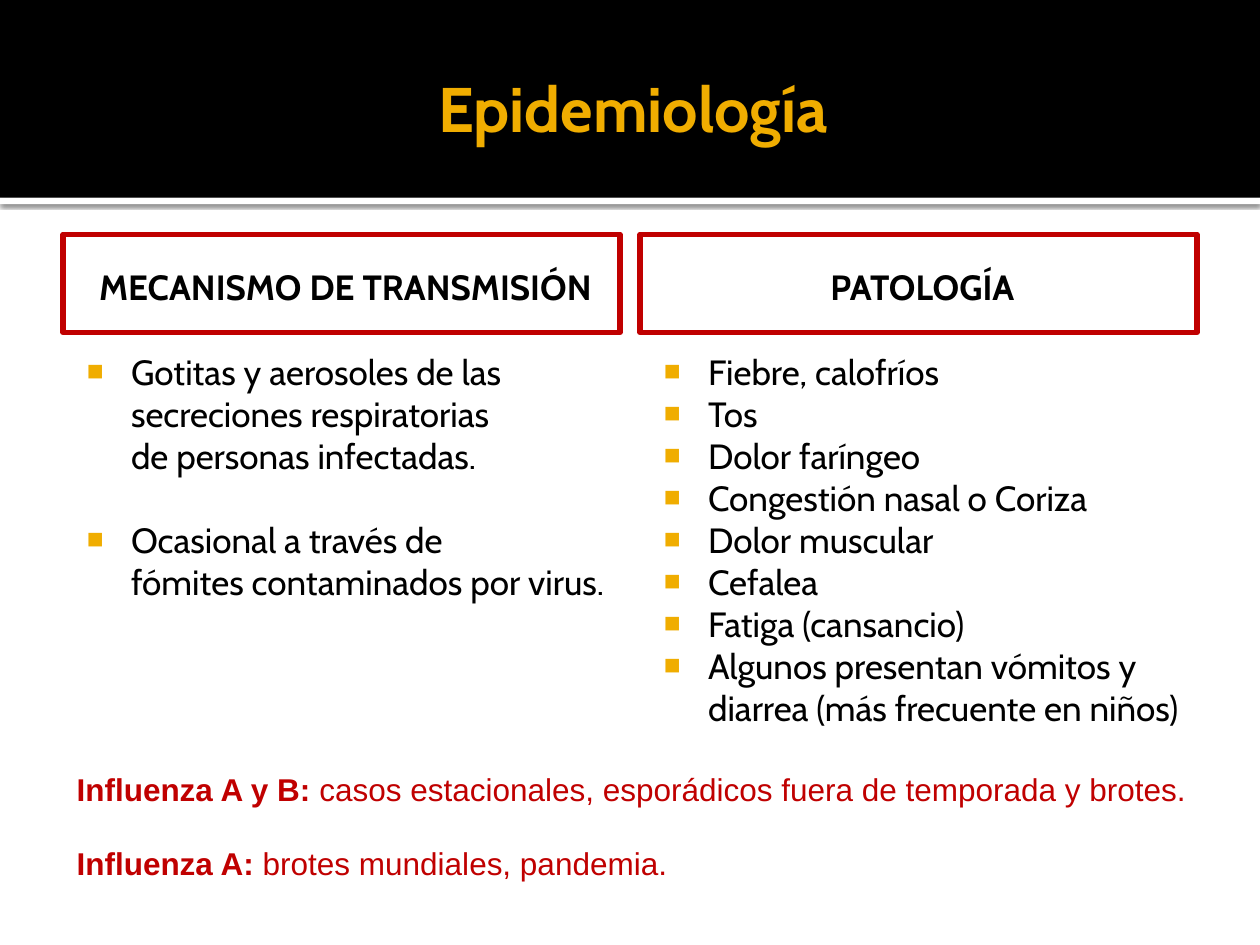
from lxml.etree import SubElement
from pptx import Presentation
from pptx.dml.color import RGBColor
from pptx.enum.shapes import MSO_SHAPE
from pptx.enum.text import MSO_ANCHOR, PP_ALIGN
from pptx.oxml import parse_xml
from pptx.oxml.ns import nsdecls, qn
from pptx.util import Inches, Pt

COLORS = {"black": "000000", "white": "FFFFFF", "gold": "F0AD00", "red": "C00000"}


def add_text(left, top, width, height, insets, anchor=MSO_ANCHOR.TOP):
    box = slide.shapes.add_textbox(Inches(left), Inches(top), Inches(width), Inches(height))
    frame = box.text_frame
    frame.word_wrap = True
    frame.vertical_anchor = anchor
    frame.margin_left, frame.margin_top, frame.margin_right, frame.margin_bottom = map(Inches, insets)
    return box


def style(paragraph, size, color, bold=None, font="Cabin"):
    paragraph.font.size = Pt(size)
    paragraph.font.name = font
    paragraph.font.bold = bold
    paragraph.font.color.rgb = RGBColor.from_string(COLORS[color])


prs = Presentation()
prs.slide_width, prs.slide_height = Inches(10), Inches(7.5)
slide = prs.slides.add_slide(prs.slide_layouts[6])

bands = []
for top, height, color in [(1.57, 0.05, "white"), (0, 1.57, "black")]:
    band = slide.shapes.add_shape(MSO_SHAPE.RECTANGLE, 0, Inches(top), Inches(10), Inches(height))
    band.fill.solid()
    band.fill.fore_color.rgb = RGBColor.from_string(COLORS[color])
    band.line.fill.background()
    band.shadow.inherit = False
    bands.append(band)

effects = bands[0].element.spPr.find(qn("a:effectLst"))
effects.append(parse_xml(
    f'<a:outerShdw {nsdecls("a")} blurRad="{Pt(2.5)}" dist="{Pt(0.8)}" dir="5400000" rotWithShape="0">'
    f'<a:srgbClr val="{COLORS["black"]}"><a:alpha val="60000"/></a:srgbClr></a:outerShdw>'))

title = add_text(0.5, 0.17, 9, 1.37, (0.1, 0.05, 0.05, 0.05), MSO_ANCHOR.MIDDLE).text_frame.paragraphs[0]
title.text = "Epidemiología"
title.alignment = PP_ALIGN.CENTER
style(title, 36, "gold", True)

columns = [
    (0.5, "MECANISMO DE TRANSMISIÓN", 24, [
        "Gotitas y aerosoles de las secreciones respiratorias \vde personas infectadas.",
        "Ocasional a través de \vfómites contaminados por virus.",
    ]),
    (5.08, "PATOLOGÍA", 0, [
        "Fiebre, calofríos",
        "Tos",
        "Dolor faríngeo",
        "Congestión nasal o Coriza",
        "Dolor muscular",
        "Cefalea",
        "Fatiga (cansancio)",
        "Algunos presentan vómitos y diarrea (más frecuente en niños)",
    ]),
]
for left, heading, gap, items in columns:
    heading_box = add_text(left, 1.86, 4.42, 0.78, (0.16, 0.1, 0.1, 0.05), MSO_ANCHOR.MIDDLE)
    heading_box.line.color.rgb = RGBColor.from_string(COLORS["red"])
    heading_box.line.width = Pt(3)
    heading_line = heading_box.text_frame.paragraphs[0]
    heading_line.text = heading
    heading_line.alignment = PP_ALIGN.CENTER
    style(heading_line, 20, "black", True)

    points = add_text(left, 2.68, 4.42, 4.32, (0.06, 0.1, 0.1, 0.05)).text_frame
    for i, item in enumerate(items):
        point = points.add_paragraph() if i else points.paragraphs[0]
        point.text = item
        point.space_before = Pt(gap if i else 0)
        style(point, 20, "black")
        props = point._p.get_or_add_pPr()
        props.set("marL", str(Inches(0.48)))
        props.set("indent", str(Inches(-0.35)))
        bullet = [SubElement(props, qn(f"a:{tag}")) for tag in ("buClr", "buSzPct", "buFont", "buChar")]
        SubElement(bullet[0], qn("a:srgbClr")).set("val", COLORS["gold"])
        bullet[1].set("val", "80000")
        bullet[2].set("typeface", "Arial")
        bullet[3].set("char", "■")
        props.append(props.find(qn("a:defRPr")))

notes = [
    ("Influenza A y B: ", "casos estacionales, esporádicos fuera de temporada y brotes."),
    ("Influenza A: ", "brotes mundiales, pandemia."),
]
strains = add_text(0.51, 6.06, 9.21, 1.01, (0.1, 0.05, 0.1, 0.05)).text_frame
for i, (strain, spread) in enumerate(notes):
    note = strains.add_paragraph() if i else strains.paragraphs[0]
    note.space_before = Pt(21 if i else 0)
    style(note, 18, "red", font="Arial")
    for words, bold in [(strain, True), (spread, False)]:
        run = note.add_run()
        run.text = words
        run.font.bold = bold

prs.save("out.pptx")
